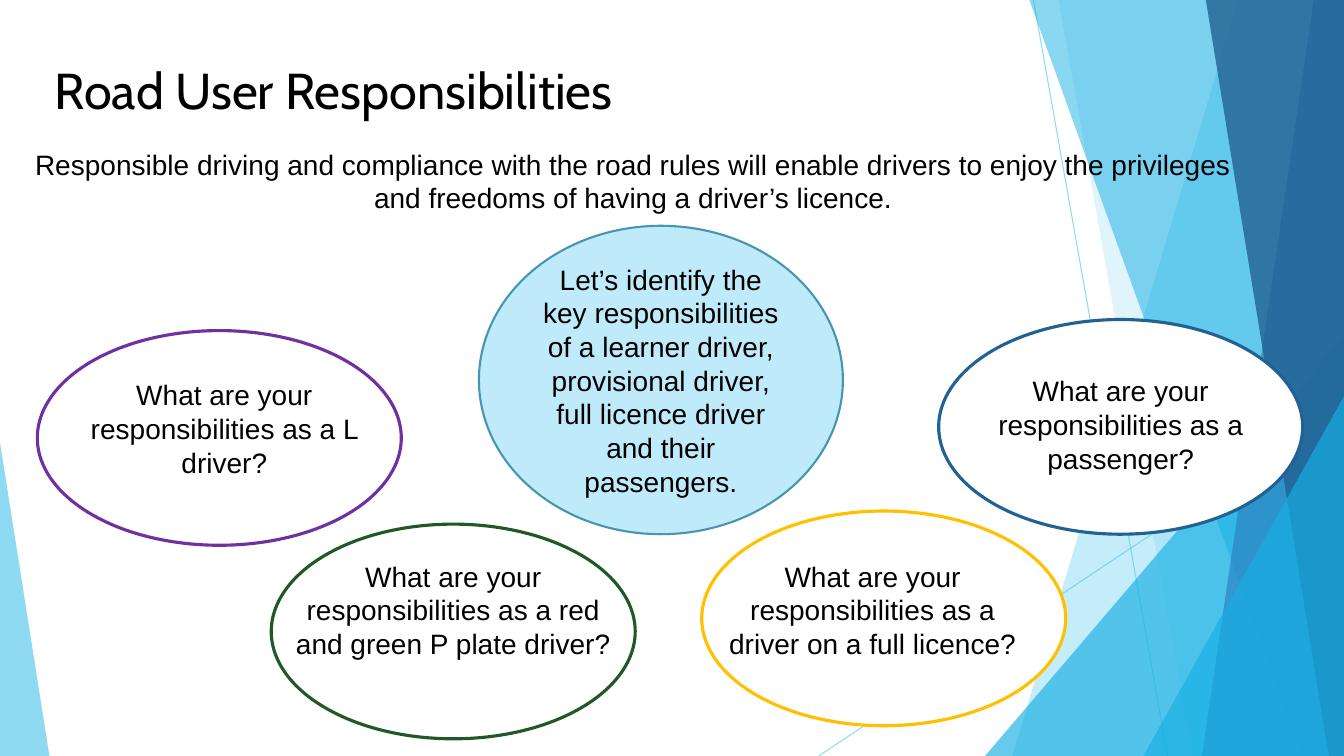
from lxml.etree import SubElement
from pptx import Presentation
from pptx.dml.color import RGBColor
from pptx.enum.shapes import MSO_CONNECTOR, MSO_SHAPE
from pptx.enum.text import MSO_ANCHOR, MSO_AUTO_SIZE, PP_ALIGN
from pptx.oxml.ns import qn
from pptx.util import Inches, Pt

BLACK = RGBColor(0x00, 0x00, 0x00)
WHITE = RGBColor(0xFF, 0xFF, 0xFF)
SKY = RGBColor(0x5F, 0xCB, 0xEF)
CYAN = RGBColor(0x17, 0xB0, 0xE4)
BLUE = RGBColor(0x2E, 0x83, 0xC3)
NAVY = RGBColor(0x22, 0x62, 0x92)
PALE = RGBColor(0xBF, 0xEA, 0xF9)
TEAL = RGBColor(0x46, 0x96, 0xB1)
GOLD = RGBColor(0xFF, 0xC0, 0x00)
GREEN = RGBColor(0x21, 0x58, 0x28)
PURPLE = RGBColor(0x70, 0x30, 0xA0)

WIDTH, HEIGHT = 13.33, 7.5

# Content
TITLE = "Road User Responsibilities"
INTRO = ("Responsible driving and compliance with the road rules will enable drivers "
         "to enjoy the privileges and freedoms of having a driver’s licence.")
CENTRE = ("Let’s identify the key responsibilities of a learner driver, provisional "
          "driver, full licence driver and their passengers.")
QUESTION = "What are your responsibilities as a "
# Ending, outline colour, oval left and top, text left and top
QUESTIONS = [
    ("driver on a full licence?", GOLD, (6.96, 5.07), (6.96, 5.5)),
    ("red and green P plate driver?", GREEN, (2.69, 5.2), (2.8, 5.5)),
    ("L driver?", PURPLE, (0.37, 3.28), (0.53, 3.7)),
    ("passenger?", NAVY, (9.31, 3.17), (9.42, 3.66)),
]
OVAL_SIZE = (3.61, 2.13)
QUESTION_SIZE = (3.39, 1.11)

# Background: start and end of each ray
RAYS = [(10.25, 0, 11.58, 7.5), (13.33, 4.03, 8.12, 7.5)]
# Bands run to the right edge: top left x, bottom left x, colour, opacity
# Triangles: left, top, width, apex position, colour, opacity
FACETS = [
    ("band", (12.28, 10.04), SKY, 36),
    ("band", (10.5, 11.83), SKY, 20),
    ("triangle", (9.77, 3.33, 3.56, 1), CYAN, 66),
    ("band", (10.21, 12.91), CYAN, 50),
    ("band", (13.03, 11.92), BLUE, 70),
    ("band", (11.96, 13.18), NAVY, 80),
    ("triangle", (11.34, 3.93, 1.99, 1), CYAN, 66),
    ("triangle", (0, 4.39, 0.49, 0), SKY, 70),
]


def set_opacity(shape, percent):
    for color in shape.element.spPr.iter(qn("a:srgbClr")):
        SubElement(color, qn("a:alpha"), val=str(percent * 1000))


def write(shape, text, font="Arial", size=20, anchor=MSO_ANCHOR.TOP):
    frame = shape.text_frame
    frame.word_wrap = True
    frame.auto_size = MSO_AUTO_SIZE.NONE
    frame.vertical_anchor = anchor
    para = frame.paragraphs[0]
    para.alignment = PP_ALIGN.CENTER
    span = para.add_run()
    span.text = text
    span.font.name = font
    span.font.size = Pt(size)
    span.font.color.rgb = BLACK


def add_text(page, place, size, text):
    box = page.shapes.add_textbox(*map(Inches, place + size))
    write(box, text)


def add_oval(page, place, size, fill, outline, weight):
    oval = page.shapes.add_shape(MSO_SHAPE.OVAL, *map(Inches, place + size))
    oval.shadow.inherit = False
    oval.fill.solid()
    oval.fill.fore_color.rgb = fill
    oval.line.color.rgb = outline
    oval.line.width = Pt(weight)
    return oval


def add_ray(page, ends):
    ray = page.shapes.add_connector(MSO_CONNECTOR.STRAIGHT, *map(Inches, ends))
    ray.line.color.rgb = SKY
    ray.line.width = Pt(0.75)
    set_opacity(ray, 70)
    SubElement(ray.element.spPr, qn("a:effectLst"))


def add_facet(page, kind, geometry, color, opacity):
    if kind == "band":
        top_left, bottom_left = geometry
        builder = page.shapes.build_freeform(Inches(top_left), 0)
        corners = [(WIDTH, 0), (WIDTH, HEIGHT), (bottom_left, HEIGHT)]
        builder.add_line_segments([(Inches(x), Inches(y)) for x, y in corners])
        facet = builder.convert_to_shape()
    else:
        left, top, width, apex = geometry
        facet = page.shapes.add_shape(
            MSO_SHAPE.ISOSCELES_TRIANGLE,
            *map(Inches, (left, top, width, HEIGHT - top)))
        facet.adjustments[0] = apex
    facet.shadow.inherit = False
    facet.fill.solid()
    facet.fill.fore_color.rgb = color
    facet.line.fill.background()
    set_opacity(facet, opacity)


def main():
    deck = Presentation()
    deck.slide_width, deck.slide_height = Inches(WIDTH), Inches(HEIGHT)
    page = deck.slides.add_slide(deck.slide_layouts[5])

    # Background
    for ends in RAYS:
        add_ray(page, ends)
    for facet in FACETS:
        add_facet(page, *facet)

    # Title and introduction
    title = page.shapes.title
    title.left, title.top, title.width, title.height = map(
        Inches, (-1.39, 0.54, 9.4, 1.44))
    write(title, TITLE, font="Cabin", size=36)
    add_text(page, (0.24, 1.41), (12.08, 0.8), INTRO)

    # Question ovals
    for ending, outline, oval_place, text_place in QUESTIONS:
        add_oval(page, oval_place, OVAL_SIZE, WHITE, outline, 2.25)
        add_text(page, text_place, QUESTION_SIZE, QUESTION + ending)

    # Central oval
    centre = add_oval(page, (4.75, 2.24), (3.61, 3.06), PALE, TEAL, 1.5)
    write(centre, CENTRE, anchor=MSO_ANCHOR.MIDDLE)

    deck.save("out.pptx")


if __name__ == "__main__":
    main()
